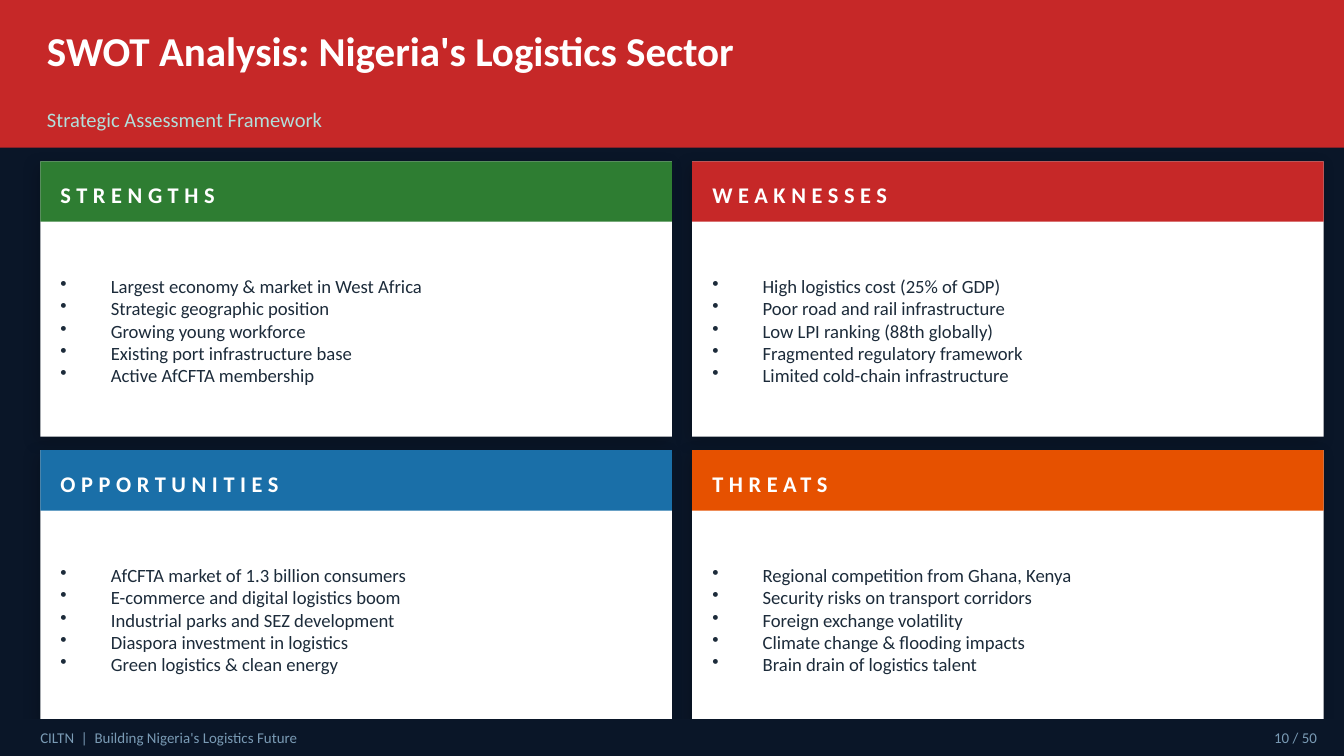
from dataclasses import dataclass

from lxml import etree
from pptx import Presentation
from pptx import util as u
from pptx.dml.color import RGBColor
from pptx.enum import shapes, text
from pptx.oxml import ns

NAVY = RGBColor(0x0A, 0x16, 0x28)
RED = RGBColor(0xC6, 0x28, 0x28)
GREEN = RGBColor(0x2E, 0x7D, 0x32)
BLUE = RGBColor(0x1A, 0x6F, 0xA8)
ORANGE = RGBColor(0xE6, 0x51, 0x00)
WHITE = RGBColor(0xFF, 0xFF, 0xFF)
MINT = RGBColor(0xB2, 0xDF, 0xDB)
INK = RGBColor(0x1C, 0x2B, 0x3A)
STEEL = RGBColor(0x7A, 0x9B, 0xB5)


@dataclass(frozen=True)
class Box:
    left: float
    top: float
    width: float
    height: float

    def spots(self) -> list[u.Length]:
        return [u.Inches(v) for v in (self.left, self.top, self.width, self.height)]


@dataclass(frozen=True)
class Style:
    size: float
    color: RGBColor
    bold: bool = False
    track: float = 0
    bullet: bool = False
    align: text.PP_ALIGN = text.PP_ALIGN.LEFT


@dataclass(frozen=True)
class Panel:
    title: str
    color: RGBColor
    items: tuple[str, ...]


TITLE = Style(22, WHITE, bold=True)
TAGLINE = Style(11, MINT)
HEADING = Style(12, WHITE, bold=True, track=3)
ITEM = Style(10, INK, bullet=True)
FOOTER = Style(8, STEEL)
NUMBER = Style(8, STEEL, align=text.PP_ALIGN.RIGHT)

PANELS = (
    Panel("STRENGTHS", GREEN, (
        "Largest economy & market in West Africa",
        "Strategic geographic position",
        "Growing young workforce",
        "Existing port infrastructure base",
        "Active AfCFTA membership",
    )),
    Panel("WEAKNESSES", RED, (
        "High logistics cost (25% of GDP)",
        "Poor road and rail infrastructure",
        "Low LPI ranking (88th globally)",
        "Fragmented regulatory framework",
        "Limited cold-chain infrastructure",
    )),
    Panel("OPPORTUNITIES", BLUE, (
        "AfCFTA market of 1.3 billion consumers",
        "E-commerce and digital logistics boom",
        "Industrial parks and SEZ development",
        "Diaspora investment in logistics",
        "Green logistics & clean energy",
    )),
    Panel("THREATS", ORANGE, (
        "Regional competition from Ghana, Kenya",
        "Security risks on transport corridors",
        "Foreign exchange volatility",
        "Climate change & flooding impacts",
        "Brain drain of logistics talent",
    )),
)


def add_shade(shape) -> None:
    group = shape._element.spPr.find(ns.qn("a:effectLst"))
    shade = etree.SubElement(
        group, ns.qn("a:outerShdw"), blurRad=str(u.Pt(8)), dist=str(u.Pt(3)),
        dir=str(135 * 60000), algn="bl", rotWithShape="0")
    color = etree.SubElement(shade, ns.qn("a:srgbClr"), val="000000")
    etree.SubElement(color, ns.qn("a:alpha"), val="18000")


def add_rect(slide, box: Box, color: RGBColor, shade: bool = False) -> None:
    shape = slide.shapes.add_shape(shapes.MSO_SHAPE.RECTANGLE, *box.spots())
    shape.shadow.inherit = False
    shape.fill.solid()
    shape.fill.fore_color.rgb = color
    shape.line.fill.background()
    if shade:
        add_shade(shape)


def add_bullet(para) -> None:
    props = para._p.get_or_add_pPr()
    indent = u.Pt(27)
    props.set("marL", str(indent))
    props.set("indent", str(-indent))
    etree.SubElement(props, ns.qn("a:buSzPct"), val="100000")
    etree.SubElement(props, ns.qn("a:buChar"), char="•")


def add_text(slide, box: Box, lines: tuple[str, ...], style: Style) -> None:
    frame = slide.shapes.add_textbox(*box.spots()).text_frame
    frame.word_wrap = True
    frame.vertical_anchor = text.MSO_ANCHOR.MIDDLE
    frame.margin_left = frame.margin_right = 0
    frame.margin_top = frame.margin_bottom = 0
    for index, line in enumerate(lines):
        para = frame.add_paragraph() if index else frame.paragraphs[0]
        para.alignment = style.align
        if style.bullet:
            add_bullet(para)
        run = para.add_run()
        run.text = line
        if style.track:
            run._r.get_or_add_rPr().set("spc", str(int(style.track * 100)))
        para.font.name = "Calibri"
        para.font.size = u.Pt(style.size)
        para.font.bold = style.bold
        para.font.color.rgb = style.color


def add_panel(slide, panel: Panel, left: float, top: float) -> None:
    add_rect(slide, Box(left, top, 4.7, 2.05), WHITE, shade=True)
    add_rect(slide, Box(left, top, 4.7, 0.45), panel.color)
    inset = left + 0.15
    add_text(slide, Box(inset, top + 0.07, 4.3, 0.35), (panel.title,), HEADING)
    add_text(slide, Box(inset, top + 0.52, 4.4, 1.48), panel.items, ITEM)


def main() -> None:
    deck = Presentation()
    deck.slide_width = u.Inches(10)
    deck.slide_height = u.Inches(10 * 9 / 16)
    slide = deck.slides.add_slide(deck.slide_layouts[6])
    slide.background.fill.solid()
    slide.background.fill.fore_color.rgb = NAVY

    add_rect(slide, Box(0, 0, 10, 1.1), RED)
    add_text(slide, Box(0.35, 0.05, 9.3, 0.65),
             ("SWOT Analysis: Nigeria's Logistics Sector",), TITLE)
    add_text(slide, Box(0.35, 0.7, 9.3, 0.38),
             ("Strategic Assessment Framework",), TAGLINE)

    for index, panel in enumerate(PANELS):
        row, col = divmod(index, 2)
        add_panel(slide, panel, 0.3 + col * 4.85, 1.2 + row * 2.15)

    add_rect(slide, Box(0, 5.35, 10, 0.28), NAVY)
    add_text(slide, Box(9, 5.35, 0.8, 0.28), ("10 / 50",), NUMBER)
    add_text(slide, Box(0.3, 5.35, 8, 0.28),
             ("CILTN  |  Building Nigeria's Logistics Future",), FOOTER)
    deck.save("out.pptx")


if __name__ == "__main__":
    main()
